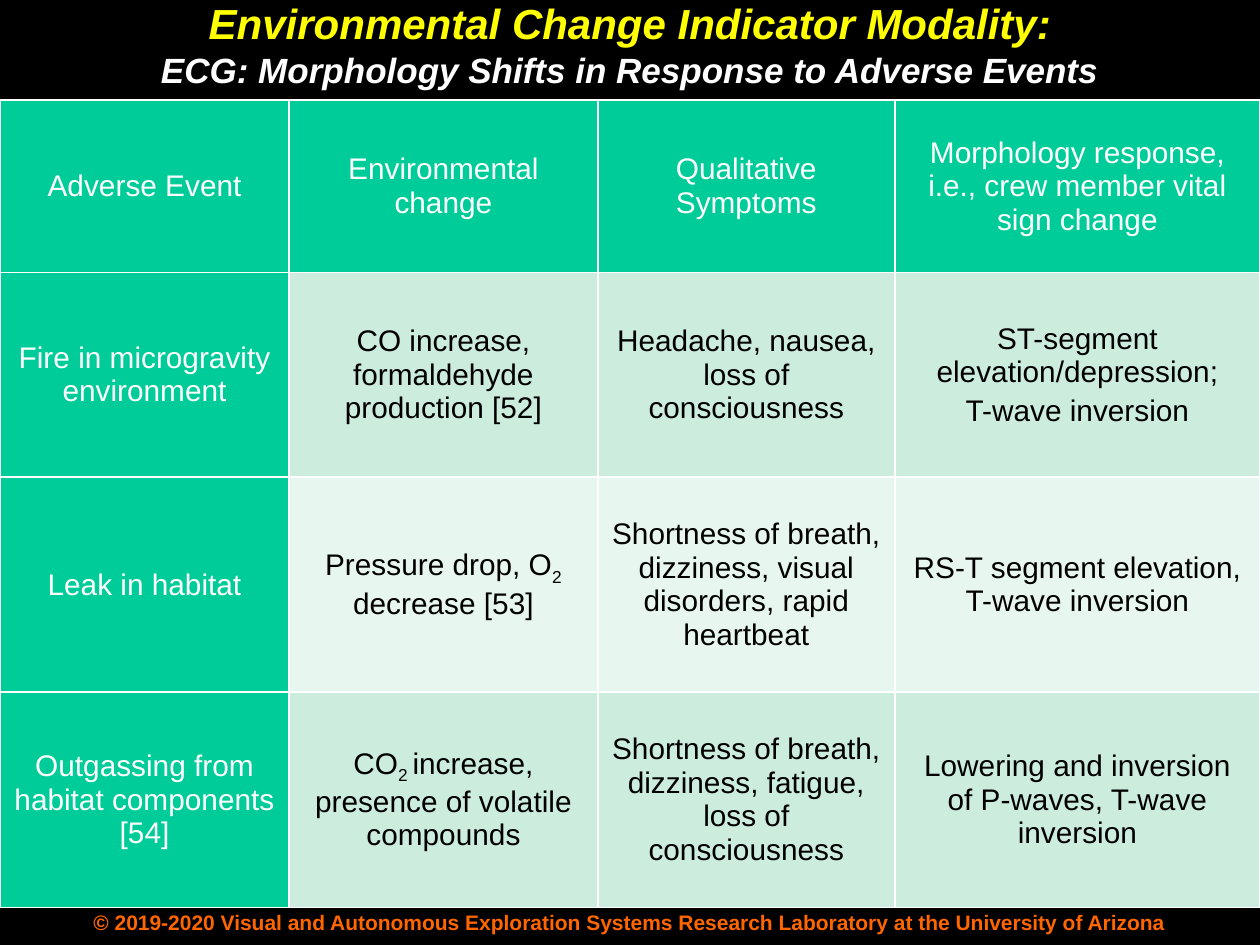
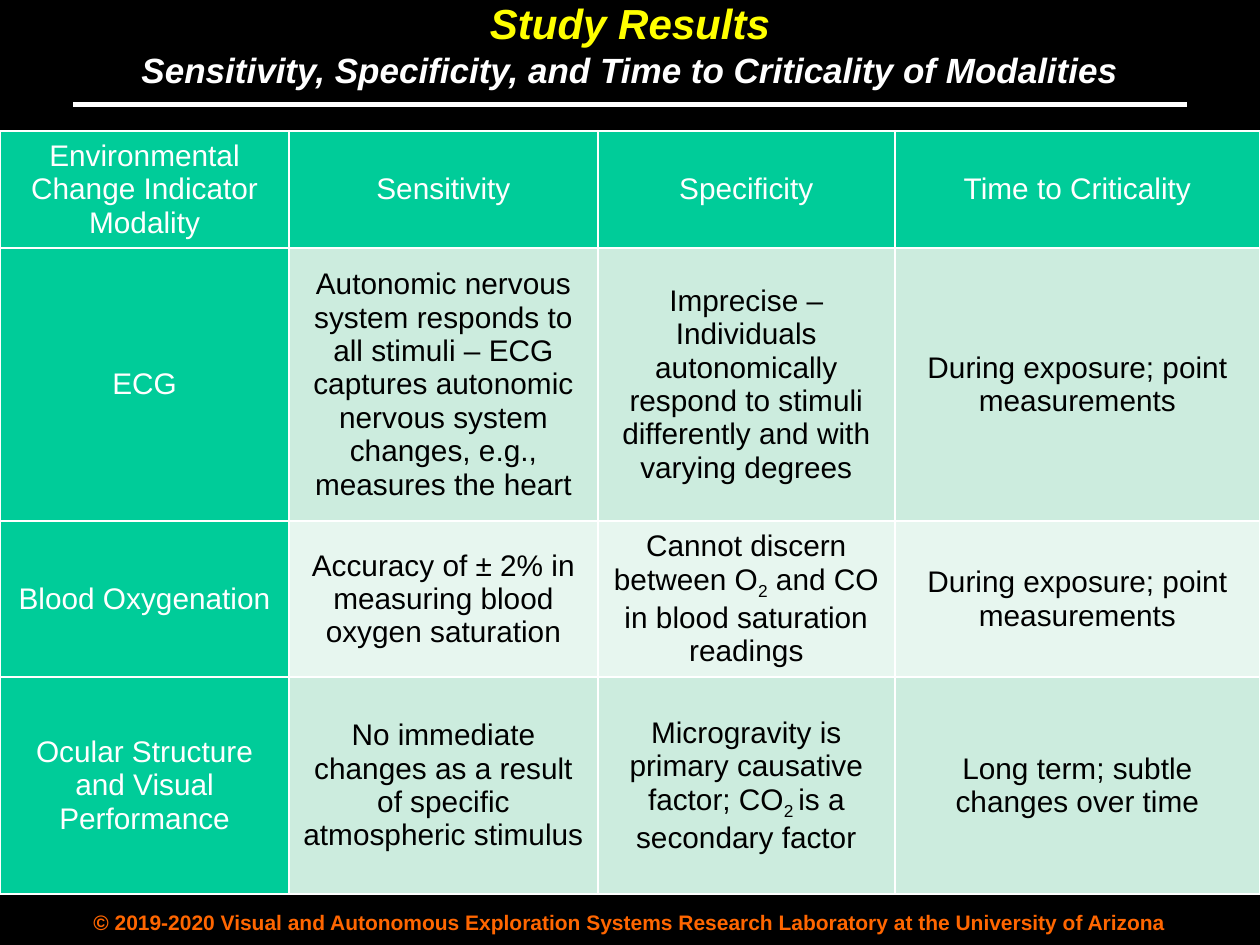
from dataclasses import dataclass

from lxml import etree
from pptx import Presentation
from pptx import util as u
from pptx.dml.color import RGBColor
from pptx.enum import shapes, text
from pptx.oxml import ns


@dataclass(frozen=True)
class Theme:
    font: str = "Arial"
    background: str = "000000"
    title: str = "FFFF00"
    light: str = "FFFFFF"
    dark: str = "000000"
    footer: str = "FF6600"
    header: str = "00CC99"
    bands: tuple = ("CCECDE", "E7F6EF")
    title_size: int = 24
    subtitle_size: int = 20
    cell_size: int = 17
    footer_size: int = 12


THEME = Theme()
WIDTH, HEIGHT = u.Cm(25.4), u.Cm(19.05)
COLUMNS = (5.83, 6.22, 5.99, 7.36)
FOOTER = ("© 2019-2020 Visual and Autonomous Exploration Systems "
          "Research Laboratory at the University of Arizona")

# Text between underscores is set as a subscript; a line break starts a paragraph.
ADVERSE_EVENTS = [
    ["Adverse Event", "Environmental change", "Qualitative Symptoms",
     "Morphology response, i.e., crew member vital sign change"],
    ["Fire in microgravity environment",
     "CO increase, formaldehyde production [52]",
     "Headache, nausea, loss of consciousness",
     "ST-segment elevation/depression;\nT-wave inversion"],
    ["Leak in habitat", "Pressure drop, O_2_ decrease [53]",
     "Shortness of breath, dizziness, visual disorders, rapid heartbeat",
     "RS-T segment elevation, T-wave inversion"],
    ["Outgassing from habitat components [54]",
     "CO_2 _increase, presence of volatile compounds",
     "Shortness of breath, dizziness, fatigue, loss of consciousness",
     "Lowering and inversion of P-waves, T-wave inversion"],
]

MODALITIES = [
    ["Environmental Change Indicator Modality", "Sensitivity", "Specificity",
     "Time to Criticality"],
    ["ECG",
     "Autonomic nervous system responds to all stimuli – ECG captures "
     "autonomic nervous system changes, e.g., measures the heart",
     "Imprecise – Individuals autonomically respond to stimuli differently "
     "and with varying degrees",
     "During exposure; point measurements"],
    ["Blood Oxygenation",
     "Accuracy of ± 2% in measuring blood oxygen saturation",
     "Cannot discern between O_2_ and CO in blood saturation readings",
     "During exposure; point measurements"],
    ["Ocular Structure and Visual Performance",
     "No immediate changes as a result of specific atmospheric stimulus",
     "Microgravity is primary causative factor; CO_2 _is a secondary factor",
     "Long term; subtle changes over time"],
]


def rgb(value):
    return RGBColor.from_string(value)


def write(p, content, *, size, color, bold=False, italic=False, after=0):
    """Fill a centred paragraph, lowering the parts between underscores."""
    p.alignment = text.PP_ALIGN.CENTER
    p.space_after = u.Pt(after)
    for i, part in enumerate(content.split("_")):
        r = p.add_run()
        r.text = part
        r.font.name = THEME.font
        r.font.size = u.Pt(size)
        r.font.bold = bold
        r.font.italic = italic
        r.font.color.rgb = rgb(color)
        if i % 2:
            r._r.get_or_add_rPr().set("baseline", "-25000")


def add_text_frame(slide, left, top, width, height):
    tf = slide.shapes.add_textbox(
        u.Cm(left), u.Cm(top), u.Cm(width), u.Cm(height)).text_frame
    tf.word_wrap = True
    tf.vertical_anchor = text.MSO_ANCHOR.TOP
    return tf


def add_title(slide, title, subtitle):
    tf = add_text_frame(slide, 1.83, -0.17, 21.74, 2.16)
    write(tf.paragraphs[0], title, size=THEME.title_size, color=THEME.title,
          bold=True, italic=True)
    write(tf.add_paragraph(), subtitle, size=THEME.subtitle_size,
          color=THEME.light, bold=True, italic=True)


def add_footer(slide):
    tf = add_text_frame(slide, 0, 18.21, 25.4, 0.76)
    write(tf.paragraphs[0], FOOTER, size=THEME.footer_size,
          color=THEME.footer, bold=True)


def add_title_rule(slide):
    y = u.Cm(2.11)
    line = slide.shapes.add_connector(
        shapes.MSO_CONNECTOR.STRAIGHT, u.Cm(1.48), y, u.Cm(23.92), y)
    line.line.color.rgb = rgb(THEME.light)
    line.line.width = u.Pt(3)
    etree.SubElement(line._element.spPr, ns.qn("a:effectLst"))


def set_borders(cell):
    tc_pr = cell._tc.get_or_add_tcPr()
    for side in ("lnL", "lnR", "lnT", "lnB"):
        ln = etree.SubElement(tc_pr, ns.qn(f"a:{side}"), w=str(u.Pt(1)))
        fill = etree.SubElement(ln, ns.qn("a:solidFill"))
        etree.SubElement(fill, ns.qn("a:srgbClr"), val=THEME.light)


def format_cell(cell, content, fill, color):
    set_borders(cell)
    cell.fill.solid()
    cell.fill.fore_color.rgb = rgb(fill)
    cell.vertical_anchor = text.MSO_ANCHOR.MIDDLE
    cell.margin_left = cell.margin_right = u.Cm(0.27)
    cell.margin_top = cell.margin_bottom = 0
    tf = cell.text_frame
    for i, line in enumerate(content.split("\n")):
        p = tf.add_paragraph() if i else tf.paragraphs[0]
        write(p, line, size=THEME.cell_size, color=color, after=3)


def add_grid(slide, top, heights, rows):
    """Add a table whose first row and first column are headings."""
    table = slide.shapes.add_table(
        len(rows), len(COLUMNS), 0, u.Cm(top), WIDTH, u.Cm(sum(heights))).table
    table.first_row = table.horz_banding = False
    for column, width in zip(table.columns, COLUMNS):
        column.width = u.Cm(width)
    for i, (height, row) in enumerate(zip(heights, rows)):
        table.rows[i].height = u.Cm(height)
        for j, content in enumerate(row):
            if i == 0 or j == 0:
                fill, color = THEME.header, THEME.light
            else:
                fill, color = THEME.bands[(i - 1) % 2], THEME.dark
            format_cell(table.cell(i, j), content, fill, color)


def add_base_slide(prs, title, subtitle):
    """Add a slide with the shared background, rule, footer and title."""
    slide = prs.slides.add_slide(prs.slide_layouts[6])
    slide.background.fill.solid()
    slide.background.fill.fore_color.rgb = rgb(THEME.background)
    add_title_rule(slide)
    add_footer(slide)
    add_title(slide, title, subtitle)
    return slide


def main():
    prs = Presentation()
    prs.slide_width, prs.slide_height = WIDTH, HEIGHT

    events = add_base_slide(
        prs, "Environmental Change Indicator Modality:",
        "ECG: Morphology Shifts in Response to Adverse Events")
    add_grid(events, 2.02, (3.47, 4.13, 4.33, 4.34), ADVERSE_EVENTS)

    results = add_base_slide(
        prs, "Study Results",
        "Sensitivity, Specificity, and Time to Criticality of Modalities")
    add_grid(results, 2.64, (2.36, 5.5, 3.15, 4.37), MODALITIES)

    prs.save("out.pptx")


if __name__ == "__main__":
    main()
